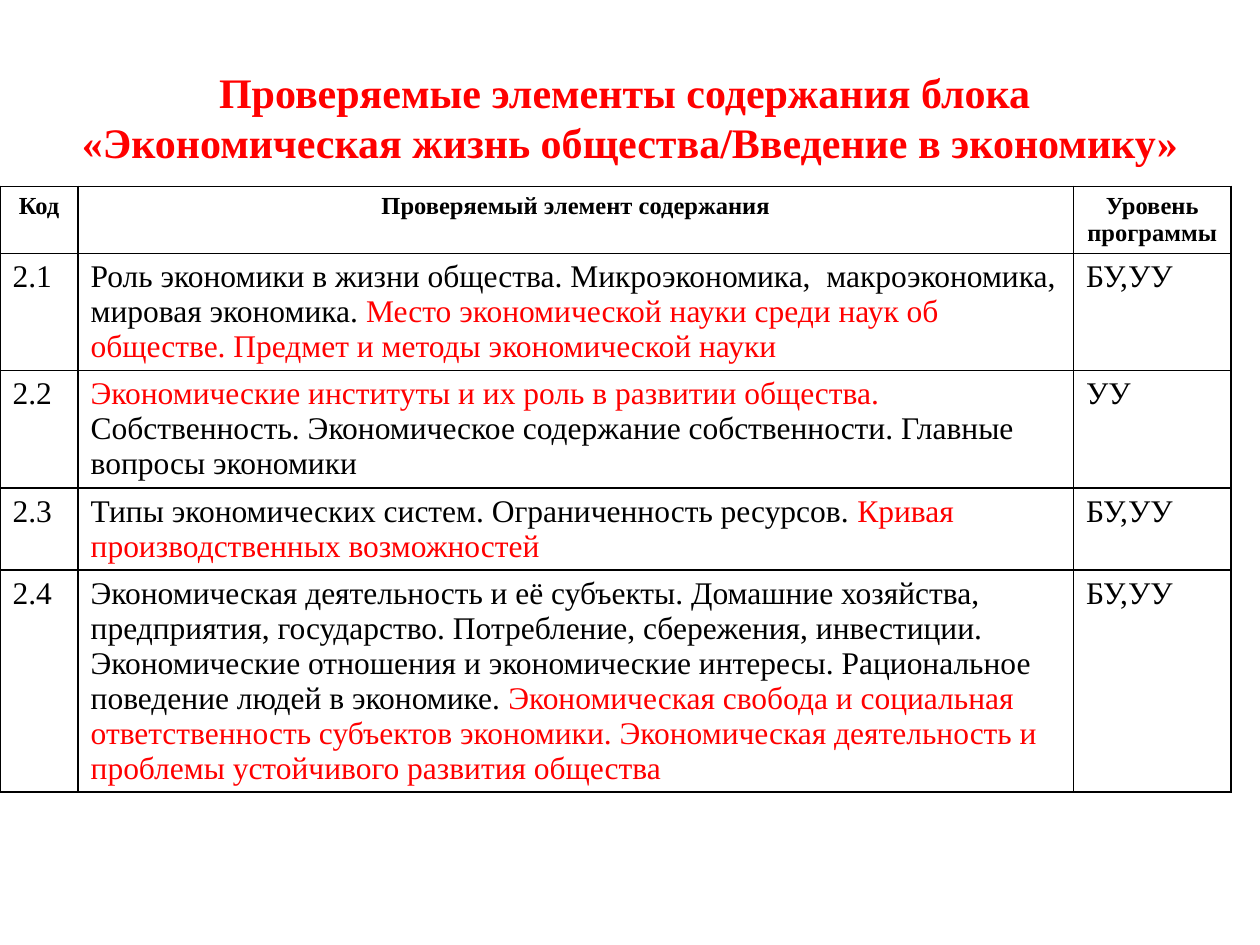
from lxml import etree
from pptx import Presentation
from pptx import util as u
from pptx.dml.color import RGBColor
from pptx.enum import text
from pptx.oxml import ns

RED = RGBColor(0xFF, 0x00, 0x00)
BLACK = RGBColor(0x00, 0x00, 0x00)
WHITE = RGBColor(0xFF, 0xFF, 0xFF)

TITLE = ["Проверяемые элементы содержания блока ",
         "«Экономическая жизнь общества/Введение в экономику»"]
HEADER = ["Код", "Проверяемый элемент содержания", "Уровень программы"]

# Each row: code, paragraphs of (text, colour) runs, programme level
ROWS = [
    ("2.1",
     [[("Роль экономики в жизни общества. Микроэкономика,  макроэкономика, "
        "мировая экономика. ", BLACK),
       ("Место экономической науки среди наук об обществе. "
        "Предмет и методы экономической науки", RED)]],
     "БУ,УУ"),
    ("2.2",
     [[("Экономические институты и их роль в развитии общества. ", RED),
       ("Собственность. Экономическое содержание собственности. Главные", BLACK)],
      [("вопросы экономики", BLACK)]],
     "УУ"),
    ("2.3",
     [[("Типы экономических систем. Ограниченность ресурсов. ", BLACK),
       ("Кривая производственных возможностей", RED)]],
     "БУ,УУ"),
    ("2.4",
     [[("Экономическая деятельность и её субъекты. Домашние хозяйства, "
        "предприятия, государство. Потребление, сбережения, инвестиции.", BLACK)],
      [("Экономические отношения и экономические интересы. "
        "Рациональное поведение людей в экономике. ", BLACK),
       ("Экономическая свобода и социальная ответственность субъектов экономики. "
        "Экономическая деятельность и проблемы устойчивого развития общества", RED)]],
     "БУ,УУ"),
]


class SlideBuilder:
    font = "Times New Roman"
    title_size, header_size, body_size = u.Pt(24), u.Pt(14), u.Pt(18)
    border = u.Pt(1)

    def __init__(self, prs):
        self.s = prs.slides.add_slide(prs.slide_layouts[5])

    def run(self, p, words, size, color=BLACK, bold=False):
        r = p.add_run()
        r.text = words
        r.font.name, r.font.size, r.font.bold = self.font, size, bold
        r.font.color.rgb = color

    def title(self, lines, left, top, width, height):
        sp = self.s.shapes.title
        sp.left, sp.top, sp.width, sp.height = map(u.Inches, (left, top, width, height))
        tf = sp.text_frame
        tf.vertical_anchor = text.MSO_ANCHOR.MIDDLE
        p = tf.paragraphs[0]
        p.alignment = text.PP_ALIGN.CENTER
        for i, line in enumerate(lines):
            if i:
                p.add_line_break()
            self.run(p, line, self.title_size, RED, True)

    def borders(self, cell):
        tc_pr = cell._tc.get_or_add_tcPr()
        for i, side in enumerate(("lnL", "lnR", "lnT", "lnB")):
            ln = etree.Element(ns.qn(f"a:{side}"), w=str(self.border))
            fill = etree.SubElement(ln, ns.qn("a:solidFill"))
            etree.SubElement(fill, ns.qn("a:srgbClr"), val=str(BLACK))
            tc_pr.insert(i, ln)

    def cell(self, cell, paragraphs, header=False):
        cell.fill.solid()
        cell.fill.fore_color.rgb = WHITE
        self.borders(cell)
        tf = cell.text_frame
        for i, runs in enumerate(paragraphs):
            p = tf.add_paragraph() if i else tf.paragraphs[0]
            p.alignment = text.PP_ALIGN.CENTER if header else text.PP_ALIGN.LEFT
            for words, color in runs:
                size = self.header_size if header else self.body_size
                self.run(p, words, size, color, header)

    def table(self, header, rows, left, top, widths, row_height):
        count = len(rows) + 1
        table = self.s.shapes.add_table(
            count, len(widths), u.Inches(left), u.Inches(top),
            u.Inches(sum(widths)), u.Inches(row_height * count)).table
        for column, width in zip(table.columns, widths):
            column.width = u.Inches(width)
        for c, words in enumerate(header):
            self.cell(table.cell(0, c), [[(words, BLACK)]], header=True)
        for r, (code, content, level) in enumerate(rows, 1):
            self.cell(table.cell(r, 0), [[(code, BLACK)]])
            self.cell(table.cell(r, 1), content)
            self.cell(table.cell(r, 2), [[(level, BLACK)]])


def main():
    prs = Presentation()
    prs.slide_width, prs.slide_height = u.Inches(10), u.Inches(7.5)
    slide = SlideBuilder(prs)
    slide.title(TITLE, 0.5, 0.3, 9, 1.25)
    slide.table(HEADER, ROWS, 0, 1.48, (0.62, 7.9, 1.25), 0.41)
    prs.save("out.pptx")


if __name__ == "__main__":
    main()
